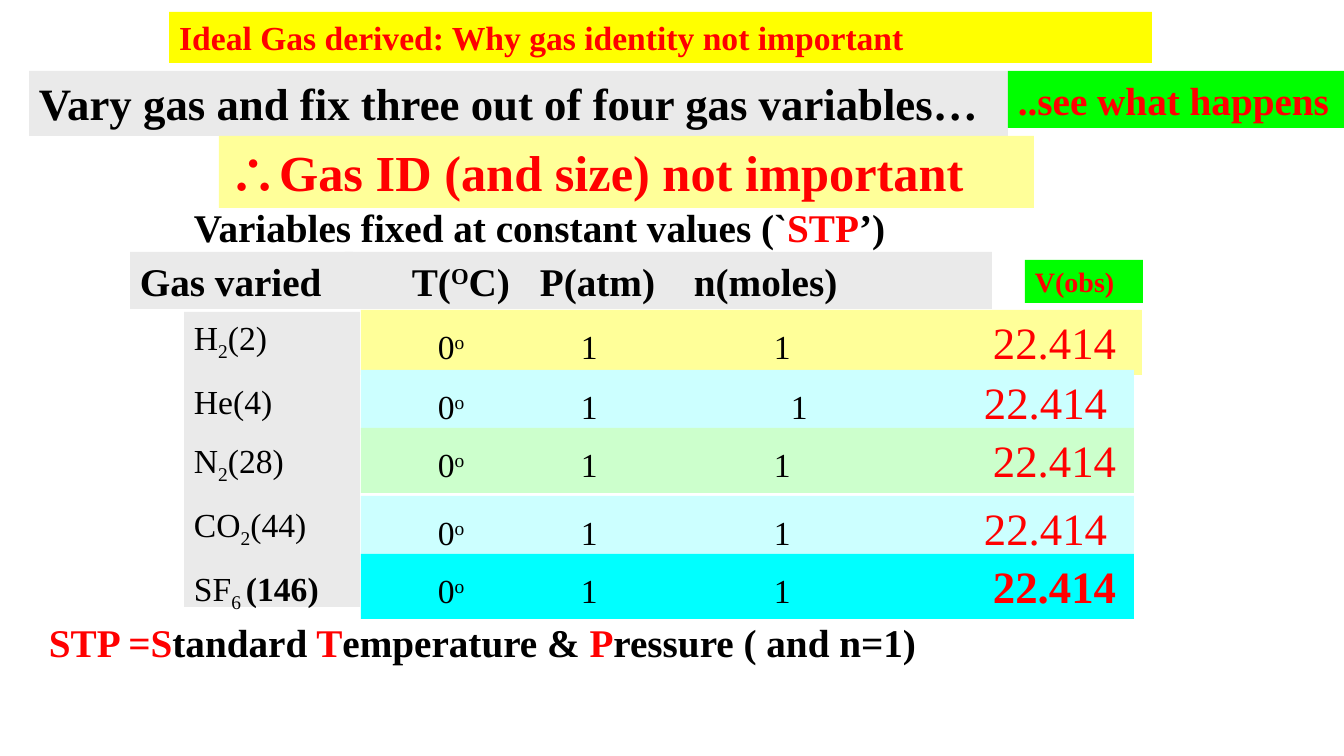
from lxml import etree
from pptx import Presentation
from pptx import util as u
from pptx.dml.color import RGBColor
from pptx.enum import shapes, text
from pptx.oxml.ns import qn

PX = u.Inches(1) / 100.8
FONT = "Times New Roman"
COLORS = {
    "black": "000000", "red": "FF0000", "grey": "EAEAEA", "yellow": "FFFF00",
    "cream": "FFFF99", "ice": "CCFFFF", "mint": "CCFFCC", "cyan": "00FFFF",
    "green": "00FF00",
}
SUB, SUP = -25000, 30000


def px(n):
    """Turn pixels into EMU."""
    return round(n * PX)


def rgb(name):
    """Look up a named colour."""
    return RGBColor.from_string(COLORS[name])


def write(p, runs, size, color="black", bold=False, tabs=()):
    """Fill a paragraph with (text, overrides) runs and left tab stops."""
    p.alignment = text.PP_ALIGN.LEFT
    for words, style in runs:
        r = p.add_run()
        r.text = words
        r.font.name = FONT
        r.font.size = u.Pt(style.get("size", size))
        r.font.bold = style.get("bold", bold)
        r.font.color.rgb = rgb(style.get("color", color))
        if "base" in style:
            r.font._element.set("baseline", str(style["base"]))
    if tabs:
        stops = etree.SubElement(p._p.get_or_add_pPr(), qn("a:tabLst"))
        for pos in tabs:
            etree.SubElement(stops, qn("a:tab"), pos=str(px(pos)), algn="l")


def style_box(sp, box, fill=None):
    """Place a shape, fill it and set up its text frame."""
    sp.left, sp.top, sp.width, sp.height = map(px, box)
    if fill:
        sp.fill.solid()
        sp.fill.fore_color.rgb = rgb(fill)
    tf = sp.text_frame
    tf.word_wrap = True
    tf.auto_size = text.MSO_AUTO_SIZE.NONE
    tf.vertical_anchor = text.MSO_ANCHOR.TOP
    return tf


def add_panel(slide, box, fill, lines, size, gap=0, **look):
    """Add a filled rectangle, or a bare text box, holding lines of runs."""
    if fill:
        sp = slide.shapes.add_shape(shapes.MSO_SHAPE.RECTANGLE, *map(px, box))
        sp.shadow.inherit = False
        sp.line.fill.background()
    else:
        sp = slide.shapes.add_textbox(*map(px, box))
    tf = style_box(sp, box, fill)
    for i, runs in enumerate(lines):
        p = tf.add_paragraph() if i else tf.paragraphs[0]
        if i and gap:
            p.space_before = u.Pt(gap)
        write(p, runs, size, **look)


def add_heading(slide, left, top):
    """Format the title and add the three statements under it."""
    title = style_box(slide.shapes.title, (left + 169, top, 983, 51), "yellow")
    write(title.paragraphs[0],
          [("Ideal Gas derived: Why gas identity not important", {})],
          24, "red", True)
    statements = [
        ((left + 29, top + 59, 979, 65), "grey", 32, "black",
         "Vary gas and fix three out of four gas variables…"),
        ((left + 1008, top + 59, 336, 57), "green", 28, "red",
         "..see what happens"),
        ((left + 219, top + 124, 815, 72), "cream", 36, "red",
         "∴Gas ID (and size) not important"),
    ]
    for box, fill, size, color, words in statements:
        add_panel(slide, box, fill, [[(words, {})]], size, color=color, bold=True)


def add_column_heads(slide, left, top):
    """Add the caption and the headings of the gas columns."""
    add_panel(slide, (left + 54, top, 781, 57), None,
              [[("Variables fixed at constant values (`", {}),
                ("STP", {"color": "red"}), ("’)", {})]], 28, bold=True)
    add_panel(slide, (left, top + 54, 223, 57), "grey",
              [[("Gas varied", {})]], 28, bold=True)
    add_panel(slide, (left + 215, top + 54, 647, 57), "grey",
              [[("\tT(", {}), ("O", {"base": SUP}),
                ("C)\tP(atm)\tn(moles)", {})]],
              28, bold=True, tabs=(57, 185, 339))
    add_panel(slide, (left + 895, top + 62, 118, 43), "green",
              [[("V(obs)", {})]], 20, color="red", bold=True)


def add_gas_rows(slide, left, top):
    """Add the list of gases and one band of values for each."""
    sub = {"base": SUB}
    gases = [
        [("H", {}), ("2", sub), ("(2)", {})],
        [("He(4)", {})],
        [("N", {}), ("2", sub), ("(28)", {})],
        [("CO", {}), ("2", sub), ("(44)", {})],
        [("SF", {}), ("6 ", sub), ("(146)", {"bold": True})],
    ]
    add_panel(slide, (left, top + 2, 176, 295), "grey", gases, 24, gap=13)
    bands = [
        (0, 781, "cream", 403, 622, False),
        (60, 773, "ice", 420, 613, False),
        (118, 773, "mint", 403, 622, False),
        (186, 773, "ice", 403, 613, False),
        (244, 773, "cyan", 403, 622, True),
    ]
    for dy, width, fill, moles, volume, strong in bands:
        value = {"size": 32, "color": "red", "bold": strong}
        add_panel(slide, (left + 177, top + dy, width, 65), fill,
                  [[("\t0", {}), ("o", {"base": SUP}), ("\t1\t1\t", {}),
                    ("22.414", value)]], 24, tabs=(67, 210, moles, volume))


def add_footer(slide, left, top):
    """Add the line that spells out the abbreviation."""
    red = {"color": "red"}
    add_panel(slide, (left, top, 1114, 57), None,
              [[("STP =S", red), ("tandard", {}), (" T", red),
                ("emperature & ", {}), ("P", red),
                ("ressure ( and n=1)", {})]], 28, bold=True)


def main():
    """Build and save the slide."""
    prs = Presentation()
    prs.slide_width, prs.slide_height = px(1344), px(756)
    slide = prs.slides.add_slide(prs.slide_layouts[5])
    add_column_heads(slide, 130, 198)
    add_heading(slide, 0, 12)
    add_gas_rows(slide, 184, 310)
    add_footer(slide, 39, 613)
    prs.save("out.pptx")


if __name__ == "__main__":
    main()
